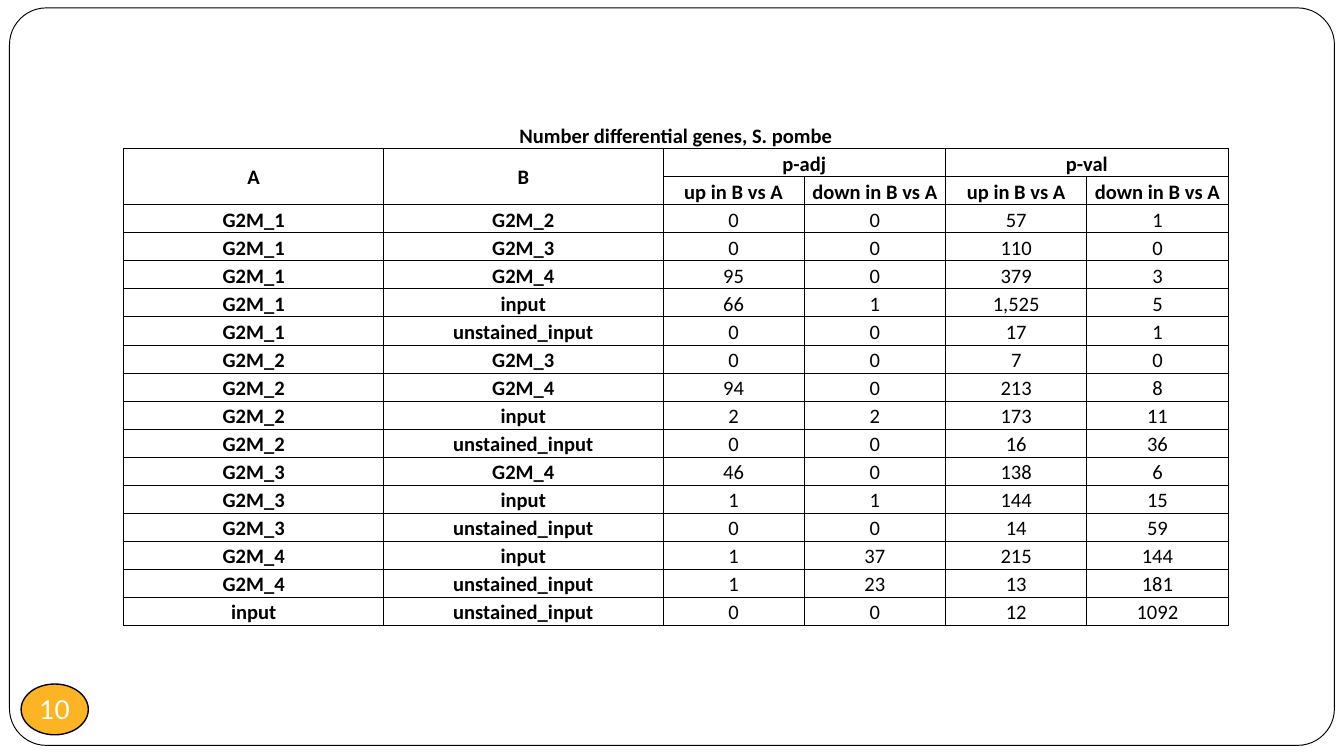
from dataclasses import dataclass

from lxml import etree
from pptx import Presentation
from pptx import util as u
from pptx.dml.color import RGBColor
from pptx.enum import shapes, text
from pptx.oxml.ns import qn

BLACK, WHITE, ORANGE = "000000", "FFFFFF", "FCB424"
COLUMN_WIDTHS = [4.91, 5.28] + [2.67] * 4
ROW_HEIGHT = 0.53
HEADER_ROWS = 3


@dataclass
class Comparison:
    a: str
    b: str
    counts: tuple[str, str, str, str]


@dataclass
class Header:
    label: str
    row: int
    col: int
    rows: int = 1
    cols: int = 1


@dataclass
class Panel:
    kind: shapes.MSO_SHAPE
    left: float
    top: float
    width: float
    height: float
    fill: str
    line_pt: float


HEADERS = [
    Header("Number differential genes, S. pombe", 0, 0, cols=6),
    Header("A", 1, 0, rows=2),
    Header("B", 1, 1, rows=2),
    Header("p-adj", 1, 2, cols=2),
    Header("p-val", 1, 4, cols=2),
] + [Header(f"{way} in B vs A", 2, col) for col, way in enumerate(["up", "down"] * 2, 2)]

COMPARISONS = [
    Comparison("G2M_1", "G2M_2", ("0", "0", "57", "1")),
    Comparison("G2M_1", "G2M_3", ("0", "0", "110", "0")),
    Comparison("G2M_1", "G2M_4", ("95", "0", "379", "3")),
    Comparison("G2M_1", "input", ("66", "1", "1,525", "5")),
    Comparison("G2M_1", "unstained_input", ("0", "0", "17", "1")),
    Comparison("G2M_2", "G2M_3", ("0", "0", "7", "0")),
    Comparison("G2M_2", "G2M_4", ("94", "0", "213", "8")),
    Comparison("G2M_2", "input", ("2", "2", "173", "11")),
    Comparison("G2M_2", "unstained_input", ("0", "0", "16", "36")),
    Comparison("G2M_3", "G2M_4", ("46", "0", "138", "6")),
    Comparison("G2M_3", "input", ("1", "1", "144", "15")),
    Comparison("G2M_3", "unstained_input", ("0", "0", "14", "59")),
    Comparison("G2M_4", "input", ("1", "37", "215", "144")),
    Comparison("G2M_4", "unstained_input", ("1", "23", "13", "181")),
    Comparison("input", "unstained_input", ("0", "0", "12", "1092")),
]


def color(value: str) -> RGBColor:
    return RGBColor.from_string(value)


def set_text(tf, words: str, font: str, size: float, fill: str, bold: bool = False) -> None:
    tf.text = words
    p = tf.paragraphs[0]
    p.alignment = text.PP_ALIGN.CENTER
    r = p.runs[0]
    r.font.name, r.font.size, r.font.bold = font, u.Pt(size), bold
    r.font.color.rgb = color(fill)


def add_panel(s, panel: Panel):
    sp = s.shapes.add_shape(panel.kind, u.Cm(panel.left), u.Cm(panel.top),
                            u.Cm(panel.width), u.Cm(panel.height))
    sp.shadow.inherit = False
    sp.fill.solid()
    sp.fill.fore_color.rgb = color(panel.fill)
    sp.line.color.rgb = color(BLACK)
    sp.line.width = u.Pt(panel.line_pt)
    return sp


def set_borders(cell, visible: str) -> None:
    """Draw the sides named in visible (letters of LRTB) and hide the others."""
    tcPr = cell._tc.get_or_add_tcPr()
    for side in "LRTB":
        ln = etree.SubElement(tcPr, qn(f"a:ln{side}"), w=str(u.Pt(0.5)))
        if side in visible:
            fill = etree.SubElement(ln, qn("a:solidFill"))
            etree.SubElement(fill, qn("a:srgbClr"), val=BLACK)
        else:
            etree.SubElement(ln, qn("a:noFill"))


def fill_cell(cell, words: str, bold: bool, anchor=text.MSO_ANCHOR.BOTTOM) -> None:
    set_text(cell.text_frame, words, "Calibri", 11, BLACK, bold)
    cell.vertical_anchor = anchor


def add_gene_table(s) -> None:
    row_count = HEADER_ROWS + len(COMPARISONS)
    frame = s.shapes.add_table(row_count, len(COLUMN_WIDTHS), u.Cm(2.34), u.Cm(2.28),
                               u.Cm(sum(COLUMN_WIDTHS)), u.Cm(ROW_HEIGHT * row_count))
    table = frame.table
    table.first_row = table.horz_banding = False
    for column, width in zip(table.columns, COLUMN_WIDTHS):
        column.width = u.Cm(width)
    for i, row in enumerate(table.rows):
        row.height = u.Cm(ROW_HEIGHT)
        for cell in row.cells:
            cell.margin_left = cell.margin_right = cell.margin_top = u.Cm(0.02)
            cell.margin_bottom = 0
            set_borders(cell, "LRTB" if i else "B")
            cell.fill.background()
            cell.text_frame.paragraphs[0].font.size = u.Pt(11)

    for h in HEADERS:
        cell = table.cell(h.row, h.col)
        if h.rows * h.cols > 1:
            cell.merge(table.cell(h.row + h.rows - 1, h.col + h.cols - 1))
        anchor = text.MSO_ANCHOR.MIDDLE if h.rows > 1 else text.MSO_ANCHOR.BOTTOM
        fill_cell(cell, h.label, True, anchor)

    for i, comparison in enumerate(COMPARISONS, HEADER_ROWS):
        for j, words in enumerate((comparison.a, comparison.b, *comparison.counts)):
            fill_cell(table.cell(i, j), words, bold=j < 2)


def add_page_number(s, number: str) -> None:
    sp = add_panel(s, Panel(shapes.MSO_SHAPE.OVAL, 0.4, 12.93, 1.27, 0.96, ORANGE, 0.75))
    tf = sp.text_frame
    tf.margin_left = tf.margin_right = tf.margin_top = tf.margin_bottom = 0
    tf.word_wrap = False
    tf.vertical_anchor = text.MSO_ANCHOR.MIDDLE
    set_text(tf, number, "Lato", 14, WHITE)


def main() -> None:
    prs = Presentation()
    prs.slide_width, prs.slide_height = u.Cm(25.4), u.Cm(14.29)
    s = prs.slides.add_slide(prs.slide_layouts[6])
    border = add_panel(s, Panel(shapes.MSO_SHAPE.ROUNDED_RECTANGLE,
                                0.18, 0.15, 25.04, 13.94, WHITE, 0.5))
    border.adjustments[0] = 0.05
    add_page_number(s, "10")
    add_gene_table(s)
    prs.save("out.pptx")


if __name__ == "__main__":
    main()
